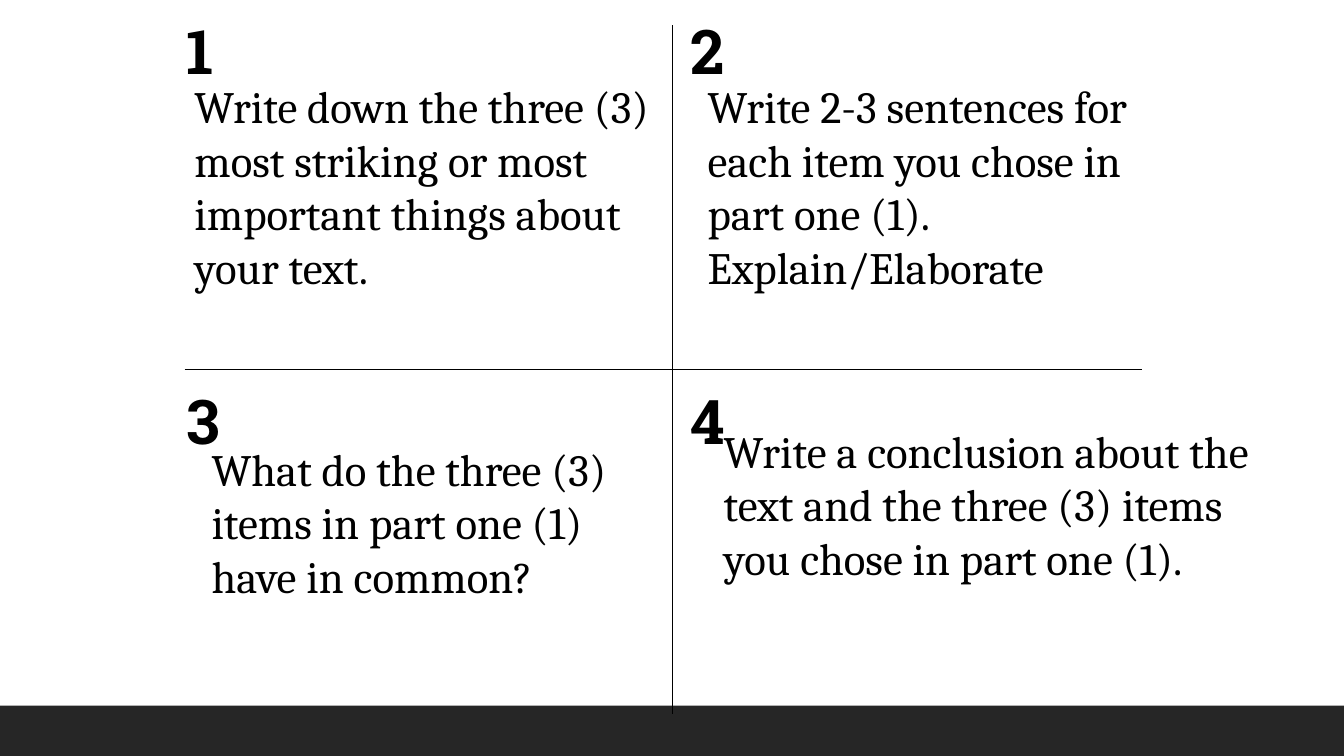
from pptx import Presentation
from pptx.dml.color import RGBColor
from pptx.enum import shapes, text
from pptx.oxml.ns import qn
from pptx.util import Inches, Pt
from lxml import etree

COLORS = {"ink": "000000", "bar": "262626"}

# number, left and top of its box, prompt, left, top, width and height of its box
QUADRANTS = [
    ("1", (1.75, 0.08),
     "Write down the three (3) most striking or most important things about your text.",
     (1.83, 0.73, 4.75, 2.26)),
    ("2", (6.75, 0.08),
     "Write 2-3 sentences for each item you chose in part one (1). Explain/Elaborate",
     (6.92, 0.73, 4.5, 2.26)),
    ("3", (1.75, 3.75),
     "What do the three (3) items in part one (1) have in common?",
     (2, 4.33, 4.5, 1.72)),
    ("4", (6.75, 3.75),
     "Write a conclusion about the text and the three (3) items you chose in part one (1).",
     (7.08, 4.15, 5.43, 1.72)),
]


def color(name):
    return RGBColor.from_string(COLORS[name])


def add_bar(s, left, top, width, height):
    bar = s.shapes.add_shape(shapes.MSO_SHAPE.RECTANGLE, Inches(left), Inches(top),
                             Inches(width), Inches(height))
    bar.shadow.inherit = False
    bar.fill.solid()
    bar.fill.fore_color.rgb = color("bar")
    bar.line.fill.background()


def add_rule(s, x1, y1, x2, y2):
    rule = s.shapes.add_connector(shapes.MSO_CONNECTOR.STRAIGHT, Inches(x1), Inches(y1),
                                  Inches(x2), Inches(y2))
    rule.line.color.rgb = color("ink")
    rule.line.width = Pt(0.75)
    etree.SubElement(rule._element.spPr, qn("a:effectLst"))


def add_text(s, content, box, font, size, bold=False):
    tf = s.shapes.add_textbox(*map(Inches, box)).text_frame
    tf.word_wrap = True
    tf.auto_size = text.MSO_AUTO_SIZE.SHAPE_TO_FIT_TEXT
    p = tf.paragraphs[0]
    p.text = content
    p.font.name = font
    p.font.size = Pt(size)
    p.font.bold = bold
    p.font.color.rgb = color("ink")


def main():
    prs = Presentation()
    prs.slide_width, prs.slide_height = Inches(13.33), Inches(7.5)
    s = prs.slides.add_slide(prs.slide_layouts[6])

    add_bar(s, 0, 7, 13.33, 0.5)
    add_rule(s, 6.67, 0.25, 6.67, 7.08)
    add_rule(s, 1.83, 3.67, 11.33, 3.67)
    for number, corner, prompt, box in QUADRANTS:
        add_text(s, number, (*corner, 0.83, 0.83), "Roboto Slab", 44, bold=True)
        add_text(s, prompt, box, "Cambria", 32)

    prs.save("out.pptx")


if __name__ == "__main__":
    main()
